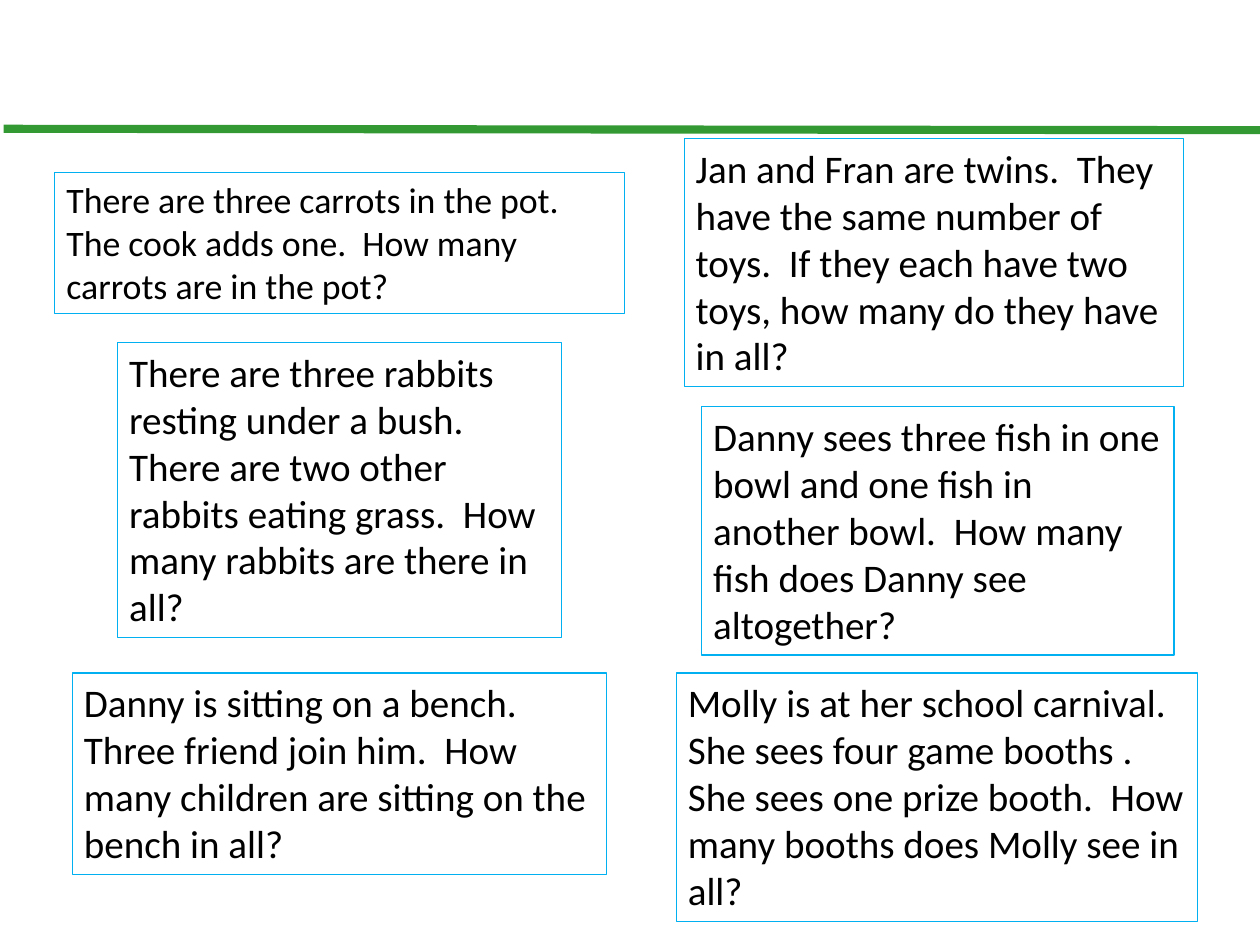
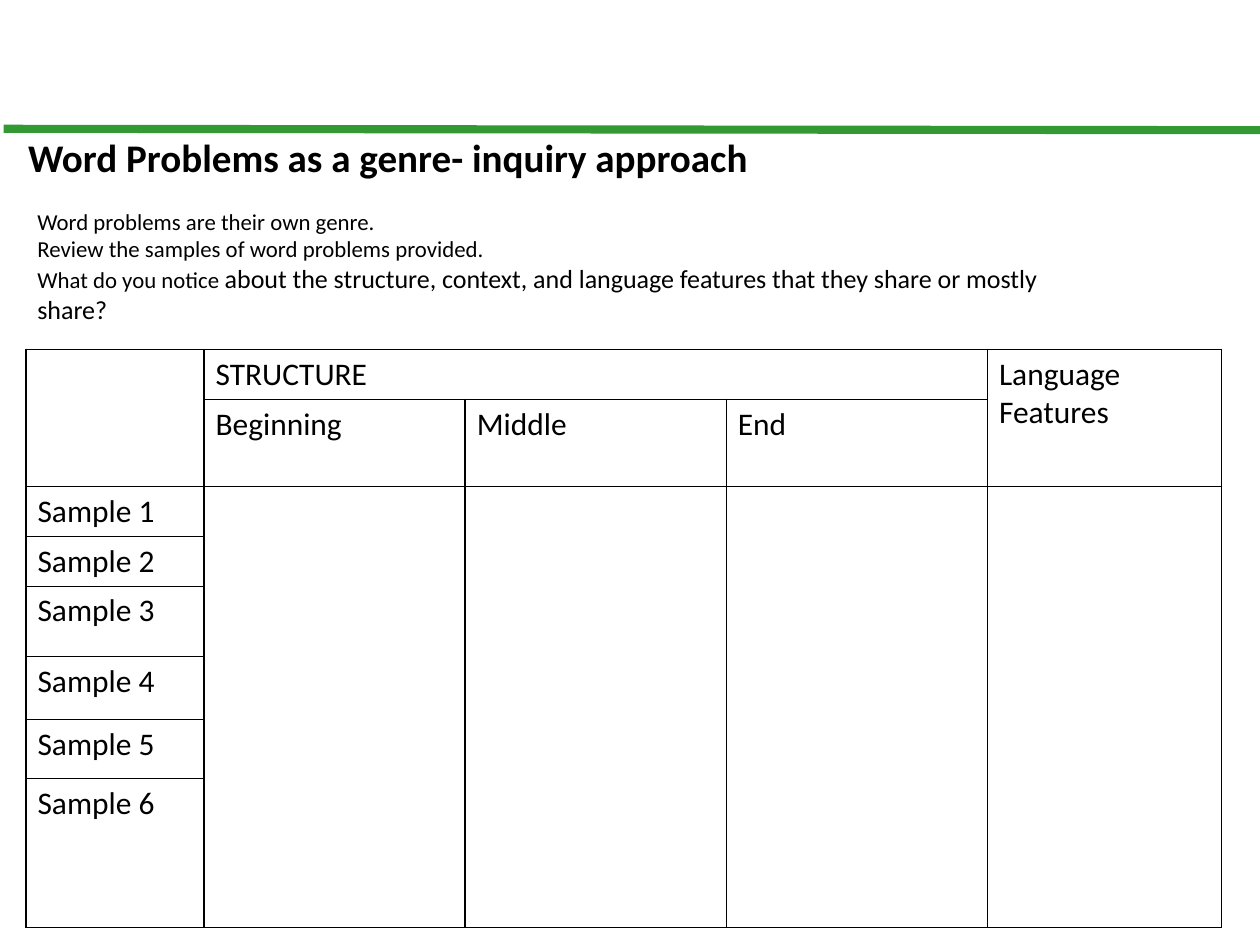
import dataclasses

import pptx
import pptx.dml.color
import pptx.enum.shapes
import pptx.enum.text
import pptx.oxml
import pptx.oxml.ns
import pptx.util
from pptx.util import Cm


@dataclasses.dataclass(frozen=True)
class Theme:
    font: str = "Calibri"
    background: str = "FFFFFF"
    text: str = "000000"
    rule: str = "339933"
    box_line: str = "00B0F0"
    grid: str = "000000"
    title_size: float = 24
    problem_size: float = 24
    small_problem_size: float = 22
    note_size: float = 14
    question_size: float = 16
    table_size: float = 19.3


def rgb(value):
    return pptx.dml.color.RGBColor.from_string(value)


class Deck:
    def __init__(self, theme):
        self.theme = theme
        self.presentation = pptx.Presentation()
        self.presentation.slide_width = Cm(27.31)
        self.presentation.slide_height = Cm(20.32)
        self.slide = None

    def add_slide(self):
        """Start a slide with the shared background and green rule."""
        layout = self.presentation.slide_layouts[6]
        self.slide = self.presentation.slides.add_slide(layout)
        fill = self.slide.background.fill
        fill.solid()
        fill.fore_color.rgb = rgb(self.theme.background)
        rule = self.slide.shapes.add_connector(
            pptx.enum.shapes.MSO_CONNECTOR.STRAIGHT,
            Cm(0.08), Cm(2.79), Cm(27.31), Cm(2.82))
        rule.line.color.rgb = rgb(self.theme.rule)
        rule.line.width = pptx.util.Pt(5)
        rule._element.spPr.append(pptx.oxml.parse_xml(
            f"<a:effectLst {pptx.oxml.ns.nsdecls('a')}/>"))

    def style_run(self, run, size, bold=False):
        run.font.name = self.theme.font
        run.font.size = pptx.util.Pt(size)
        run.font.bold = bold
        run.font.color.rgb = rgb(self.theme.text)

    def fill_frame(self, text_frame, paragraphs):
        """Write paragraphs, each a list of (text, size, bold) runs."""
        text_frame.word_wrap = True
        text_frame.auto_size = pptx.enum.text.MSO_AUTO_SIZE.SHAPE_TO_FIT_TEXT
        text_frame.vertical_anchor = pptx.enum.text.MSO_ANCHOR.TOP
        for index, runs in enumerate(paragraphs):
            paragraph = (text_frame.add_paragraph() if index
                         else text_frame.paragraphs[0])
            paragraph.alignment = pptx.enum.text.PP_ALIGN.LEFT
            for text, size, bold in runs:
                run = paragraph.add_run()
                run.text = text
                self.style_run(run, size, bold)

    def add_text(self, left, top, width, height, paragraphs):
        shape = self.slide.shapes.add_textbox(
            Cm(left), Cm(top), Cm(width), Cm(height))
        self.fill_frame(shape.text_frame, paragraphs)

    def add_problem(self, left, top, width, height, text, size):
        shape = self.slide.shapes.add_shape(
            pptx.enum.shapes.MSO_SHAPE.RECTANGLE,
            Cm(left), Cm(top), Cm(width), Cm(height))
        shape.shadow.inherit = False
        shape.fill.background()
        shape.line.color.rgb = rgb(self.theme.box_line)
        shape.line.width = pptx.util.Pt(0.75)
        self.fill_frame(shape.text_frame, [[(text, size, False)]])

    def style_cell(self, cell):
        cell.fill.background()
        properties = cell._tc.get_or_add_tcPr()
        for index, side in enumerate(("lnL", "lnR", "lnT", "lnB")):
            properties.insert(index, pptx.oxml.parse_xml(
                f"<a:{side} {pptx.oxml.ns.nsdecls('a')} w='12700'><a:solidFill>"
                f"<a:srgbClr val='{self.theme.grid}'/></a:solidFill></a:{side}>"))

    def add_table(self, left, top, widths, heights, texts, merges):
        """Texts map (row, column) to wording; merges pair cell corners."""
        table = self.slide.shapes.add_table(
            len(heights), len(widths), Cm(left), Cm(top),
            Cm(sum(widths)), Cm(sum(heights))).table
        table.first_row = False
        table.horz_banding = False
        for column, width in zip(table.columns, widths):
            column.width = Cm(width)
        for row, height in zip(table.rows, heights):
            row.height = Cm(height)
        for cell in table.iter_cells():
            self.style_cell(cell)
        for start, end in merges:
            table.cell(*start).merge(table.cell(*end))
        for position, text in texts.items():
            paragraph = table.cell(*position).text_frame.paragraphs[0]
            paragraph.text = text
            self.style_run(paragraph.runs[0], self.theme.table_size)


def main():
    theme = Theme()
    deck = Deck(theme)

    # Slide 1: sample word problems
    deck.add_slide()
    large, small = theme.problem_size, theme.small_problem_size
    problems = [
        (1.19, 3.73, 12.34, 3.07, "There are three carrots in the pot.  The cook "
         "adds one.  How many carrots are in the pot?", small),
        (14.83, 3.0, 10.82, 5.38, "Jan and Fran are twins.  They have the same "
         "number of toys.  If they each have two toys, how many do they have "
         "in all?", large),
        (2.55, 7.42, 9.63, 6.4, "There are three rabbits resting under a bush. "
         "There are two other rabbits eating grass.  How many rabbits are there "
         "in all?", large),
        (15.21, 8.81, 10.24, 5.38, "Danny sees three fish in one bowl and one "
         "fish in another bowl.  How many fish does Danny see altogether?", large),
        (1.57, 14.58, 11.58, 4.37, "Danny is sitting on a bench.  Three friend "
         "join him.  How many children are sitting on the bench in all?", large),
        (14.66, 14.58, 11.3, 5.38, "Molly is at her school carnival.  She sees "
         "four game booths .  She sees one prize booth.  How many booths does "
         "Molly see in all?", large),
    ]
    for problem in problems:
        deck.add_problem(*problem)

    # Slide 2: heading and questions
    deck.add_slide()
    deck.add_text(0.36, 2.77, 26.64, 2.11, [
        [("Word Problems as a genre- inquiry approach", theme.title_size, True)]])
    note = theme.note_size
    deck.add_text(0.56, 4.37, 22.5, 2.82, [
        [("Word problems are their own genre.", note, False)],
        [("Review the samples of word problems provided.", note, False)],
        [("What do you notice ", note, False),
         ("about the structure, context, and language features that they share "
          "or mostly share?", theme.question_size, False)],
    ])

    # Slide 2: table for the six samples
    texts = {(0, 1): "STRUCTURE", (0, 4): "Language Features"}
    for column, part in enumerate(("Beginning", "Middle", "End"), start=1):
        texts[1, column] = part
    for number in range(1, 7):
        texts[number + 1, 0] = f"Sample {number}"
    merges = [((0, 0), (1, 0)), ((0, 1), (0, 3)), ((0, 4), (1, 4))]
    merges += [((2, column), (7, column)) for column in range(1, 5)]
    deck.add_table(
        0.56, 7.57, [3.86, 5.66, 5.66, 5.66, 5.08],
        [1.08, 1.88, 1.08, 1.08, 1.52, 1.37, 1.27, 3.23], texts, merges)

    deck.presentation.save("out.pptx")


if __name__ == "__main__":
    main()
